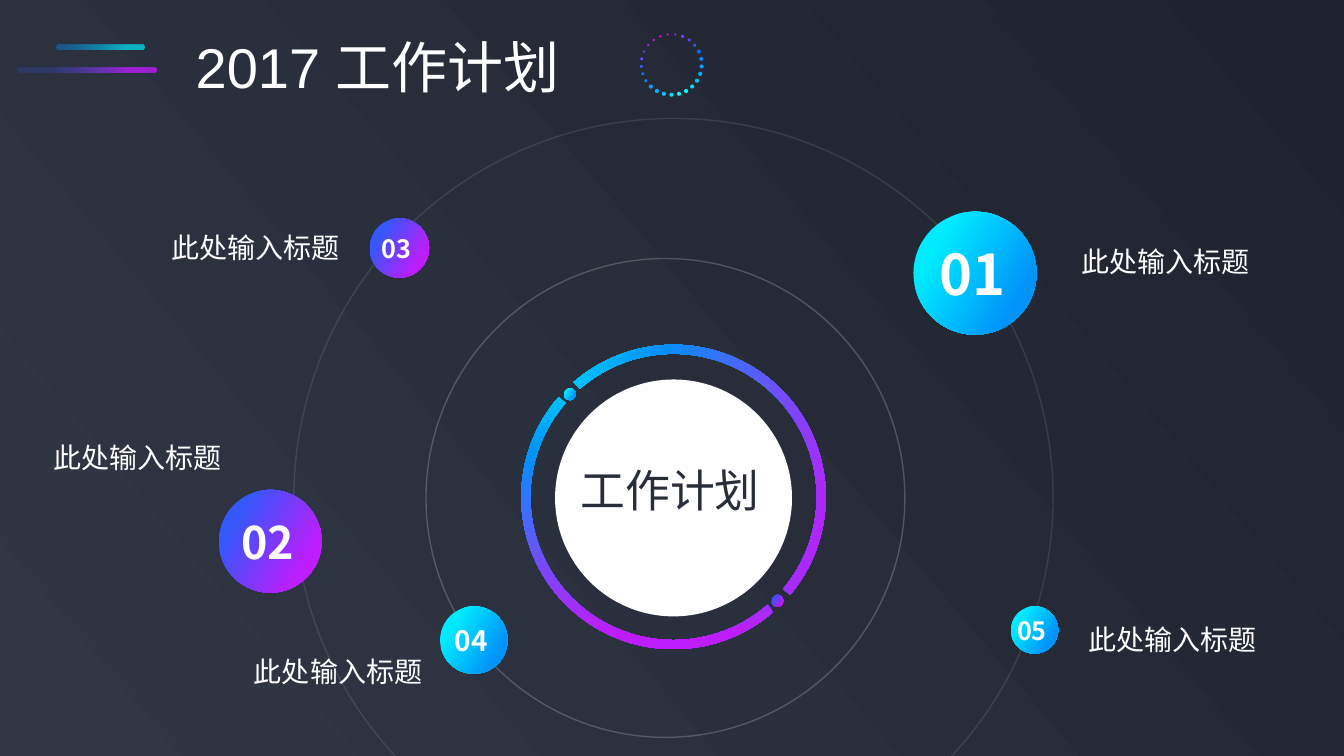
import math
from dataclasses import dataclass

import pptx
import pptx.dml.color
import pptx.enum.shapes
import pptx.enum.text
import pptx.oxml.ns
import pptx.util
from lxml import etree

Inches = pptx.util.Inches
ALIGN = pptx.enum.text.PP_ALIGN
ANCHOR = pptx.enum.text.MSO_ANCHOR
SHAPE = pptx.enum.shapes.MSO_SHAPE
qn = pptx.oxml.ns.qn


@dataclass(frozen=True)
class Theme:
    latin: str = "Arial"
    chinese: str = "Noto Sans CJK SC"
    white: str = "FFFFFF"
    disc: str = "FEFEFE"
    dark: str = "282D3A"
    title_size: int = 40
    center_size: int = 32
    label_size: int = 20
    # Gradient stops: position in percent, colour, opacity in percent
    backdrop: tuple = ((0, "313745", 100), (100, "1E222E", 100))
    cyan: tuple = ((21, "00ECFE", 100), (80, "0094FA", 100))
    violet: tuple = ((21, "3558FB", 100), (80, "BE1DFB", 100))
    arc: tuple = ((0, "00ECFE", 100), (35, "0094FA", 100), (95, "BE1DFB", 100))
    violet_bar: tuple = ((21, "3558FB", 20), (80, "BE1DFB", 80))
    cyan_bar: tuple = ((10, "0094FA", 40), (79, "00ECFE", 70))
    dots: tuple = (
        "01DEFF", "00F7FF", "00F7FF", "00DFFE", "01C9FD", "02B2FD", "029CFD",
        "0285FB", "036EFA", "2D5CFA", "5748FD", "7D3EFC", "9F26E7", "D813FB",
        "FC02F9", "D912FC", "AA27FB", "7F39F6", "564EFC", "2E5CFB", "026FF9",
        "0384FB", "029CFB", "02B2FD", "01C9FD",
    )


THEME = Theme()


def rgb(color):
    return pptx.dml.color.RGBColor.from_string(color)


def add_opacity(color_element, percent):
    alpha = etree.SubElement(color_element, qn("a:alpha"))
    alpha.set("val", str(percent * 1000))


def fill_gradient(owner, fill, stops, angle):
    """Fill a shape or the page background; angle runs clockwise in degrees."""
    fill.gradient()
    fill.gradient_angle = (360 - angle) % 360
    stop_list = owner.element.find(".//" + qn("a:gsLst"))
    for stop in list(stop_list):
        stop_list.remove(stop)
    for position, color, opacity in stops:
        stop = etree.SubElement(stop_list, qn("a:gs"))
        stop.set("pos", str(position * 1000))
        value = etree.SubElement(stop, qn("a:srgbClr"))
        value.set("val", color)
        if opacity < 100:
            add_opacity(value, opacity)


def paint(shape, fill, angle=30):
    """Fill with one colour, or with a tuple of gradient stops."""
    shape.shadow.inherit = False
    shape.line.fill.background()
    if isinstance(fill, str):
        shape.fill.solid()
        shape.fill.fore_color.rgb = rgb(fill)
    else:
        fill_gradient(shape, shape.fill, fill, angle)


def add_centered(page, kind, center_x, center_y, size):
    return page.shapes.add_shape(
        kind, Inches(center_x - size / 2), Inches(center_y - size / 2),
        Inches(size), Inches(size))


def add_circle(page, center_x, center_y, size, fill):
    circle = add_centered(page, SHAPE.OVAL, center_x, center_y, size)
    paint(circle, fill)
    return circle


def add_orbit(page, center_x, center_y, size, opacity):
    orbit = add_centered(page, SHAPE.OVAL, center_x, center_y, size)
    orbit.shadow.inherit = False
    orbit.fill.background()
    orbit.line.color.rgb = rgb(THEME.white)
    orbit.line.width = pptx.util.Pt(1)
    line = orbit.element.find(".//" + qn("a:ln"))
    add_opacity(line.find(".//" + qn("a:srgbClr")), opacity)


def add_bar(page, left, top, width, fill):
    bar = page.shapes.add_shape(SHAPE.ROUNDED_RECTANGLE, Inches(left),
                                Inches(top), Inches(width), Inches(0.05))
    bar.adjustments[0] = 0.42
    paint(bar, fill, 0)


def add_arc(page, start, end, angle):
    """Draw a band of the central ring, clockwise between two angles."""
    arc = add_centered(page, SHAPE.BLOCK_ARC, 6.68, 4.93, 3.02)
    # An angle adjustment counts 0.6 for each degree
    arc.adjustments[0] = start * 0.6
    arc.adjustments[1] = end * 0.6
    arc.adjustments[2] = 0.03
    paint(arc, THEME.arc, angle)


def add_dot_ring(page):
    center_x, center_y, radius = 6.66, 0.64, 0.3
    sizes = [0.04] * 9 + [0.03] * 3 + [0.02] * 6 + [0.03] * 4 + [0.04] * 3
    for index, (size, color) in enumerate(zip(sizes, THEME.dots)):
        turn = math.radians(90 - index * 360 / len(sizes))
        add_circle(page, center_x + radius * math.cos(turn),
                   center_y + radius * math.sin(turn), size, color)


def write_text(frame, text, *, size, color=THEME.white, font=THEME.chinese,
               bold=False, align=ALIGN.LEFT, anchor=ANCHOR.TOP):
    """Append one formatted span to the first paragraph of the frame."""
    frame.word_wrap = False
    frame.vertical_anchor = anchor
    para = frame.paragraphs[0]
    para.alignment = align
    span = para.add_run()
    span.text = text
    span.font.size = pptx.util.Pt(size)
    span.font.bold = bold
    span.font.color.rgb = rgb(color)
    span.font.name = font
    east_asian = etree.SubElement(span.font._element, qn("a:ea"))
    east_asian.set("typeface", font)


def add_label(page, left, top, width, height, text, **text_format):
    box = page.shapes.add_textbox(Inches(left), Inches(top),
                                  Inches(width), Inches(height))
    write_text(box.text_frame, text, **text_format)


def add_planet(page, number, center_x, center_y, size, fill, text_size):
    frame = add_circle(page, center_x, center_y, size, fill).text_frame
    frame.margin_left = frame.margin_top = frame.margin_bottom = 0
    frame.margin_right = Inches(0.05)
    write_text(frame, number, size=text_size, bold=True,
               align=ALIGN.CENTER, anchor=ANCHOR.MIDDLE)


def set_title(page):
    title = page.shapes.title
    title.left, title.top = Inches(1.84), Inches(0.27)
    title.width, title.height = Inches(4.16), Inches(0.77)
    frame = title.text_frame
    frame.auto_size = pptx.enum.text.MSO_AUTO_SIZE.NONE
    write_text(frame, "2017 ", size=THEME.title_size, font=THEME.latin)
    write_text(frame, "工作计划", size=THEME.title_size)


def main():
    deck = pptx.Presentation()
    deck.slide_width, deck.slide_height = Inches(13.33), Inches(7.5)
    page = deck.slides.add_slide(deck.slide_layouts[5])
    fill_gradient(page, page.background.fill, THEME.backdrop, 320)
    set_title(page)
    add_dot_ring(page)
    add_bar(page, 0.17, 0.67, 1.38, THEME.violet_bar)
    add_bar(page, 0.56, 0.44, 0.87, THEME.cyan_bar)

    add_arc(page, 229, 40, 15)
    add_arc(page, 49, 221, 90)
    add_circle(page, 5.65, 3.91, 0.12, THEME.cyan)
    add_circle(page, 7.71, 5.96, 0.12, THEME.violet)
    add_orbit(page, 6.6, 4.94, 4.75, 20)
    add_orbit(page, 6.68, 4.94, 7.53, 10)

    for planet in (("01", 9.67, 2.71, 1.22, THEME.cyan, 40),
                   ("02", 2.68, 5.37, 1.02, THEME.violet, 32),
                   ("03", 3.96, 2.46, 0.59, THEME.violet, 18),
                   ("04", 4.7, 6.35, 0.67, THEME.cyan, 20),
                   ("05", 10.26, 6.25, 0.47, THEME.cyan, 18)):
        add_planet(page, *planet)

    add_circle(page, 6.68, 4.94, 2.35, THEME.disc)
    add_label(page, 5.66, 4.54, 2, 0.64, "工作计划",
              size=THEME.center_size, color=THEME.dark)
    for left, top in ((10.7, 6.13), (1.6, 2.24), (10.63, 2.38),
                      (2.42, 6.44), (0.43, 4.32)):
        add_label(page, left, top, 1.88, 0.44, "此处输入标题",
                  size=THEME.label_size)
    deck.save("out.pptx")


if __name__ == "__main__":
    main()
